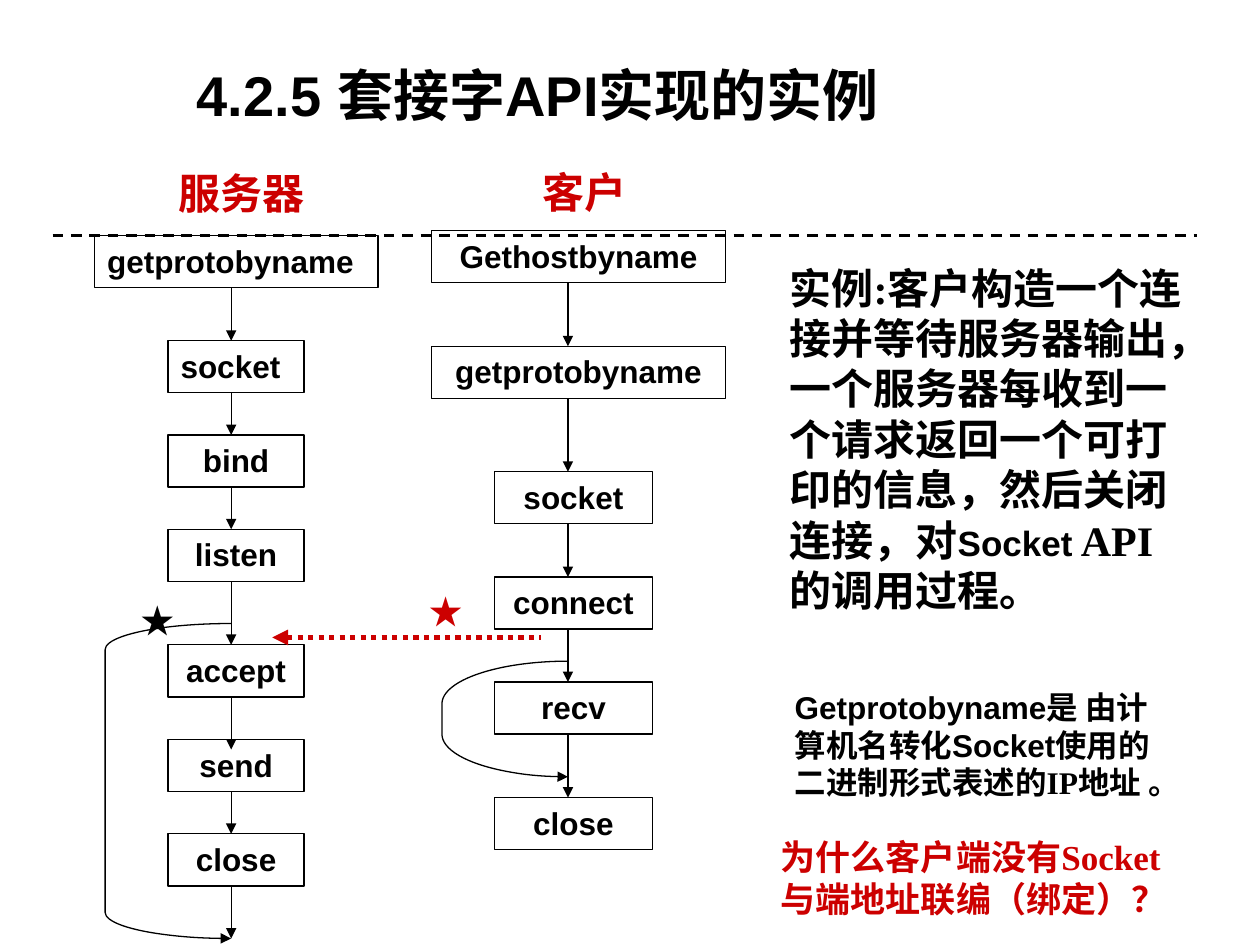
"""Build a slide on the socket API call sequence of a server and a client."""
from dataclasses import dataclass

from lxml.etree import SubElement
from pptx import Presentation
from pptx.dml.color import RGBColor
from pptx.enum.dml import MSO_LINE as Dash
from pptx.enum.shapes import MSO_CONNECTOR as Link, MSO_SHAPE as Preset
from pptx.enum.text import MSO_ANCHOR as Anchor, MSO_AUTO_SIZE as Fit, PP_ALIGN as Align
from pptx.oxml.ns import qn
from pptx.util import Cm, Pt


@dataclass(frozen=True)
class Theme:
    black: RGBColor = RGBColor(0, 0, 0)
    red: RGBColor = RGBColor(0xCC, 0, 0)
    sans: str = "Arial"
    serif: str = "Times New Roman"
    title: int = 32
    head: int = 24
    note: int = 20
    label: int = 18
    thin: float = 0.75


theme = Theme()


def write(box, spans, color=theme.black, align=Align.LEFT, bold=True, wrap=True):
    frame = box.text_frame
    layout = {"word_wrap": wrap, "auto_size": Fit.SHAPE_TO_FIT_TEXT, "vertical_anchor": Anchor.TOP}
    for name, value in layout.items():
        setattr(frame, name, value)
    para = frame.paragraphs[0]
    para.alignment = align
    for text, size, font in spans:
        span = para.add_run()
        span.text = text
        span.font.color.rgb = color
        for name, value in {"size": Pt(size), "name": font, "bold": bold}.items():
            setattr(span.font, name, value)


def draw_line(start, finish, color=theme.black, width=theme.thin, dash=None, tip="tailEnd"):
    line = page.shapes.add_connector(Link.STRAIGHT, *map(Cm, start + finish))
    line.line.color.rgb = color
    line.line.width = Pt(width)
    line.line.dash_style = dash
    if tip:
        SubElement(line.line._get_or_add_ln(), qn("a:" + tip), type="triangle")
    SubElement(line._element.spPr, qn("a:effectLst"))


deck = Presentation()
deck.slide_width, deck.slide_height = Cm(25.4), Cm(19.05)
page = deck.slides.add_slide(deck.slide_layouts[6])

box_height = 1.05
server_x, client_x = 4.66, 11.45
server_wide, server_narrow = (1.91, 5.71), (3.39, 2.74)
client_wide, client_narrow = (8.7, 5.93), (9.97, 3.18)
calls = [
    ("getprotobyname", server_wide, 4.75, Align.LEFT),
    ("socket", server_narrow, 6.87, Align.LEFT),
    ("bind", server_narrow, 8.77, Align.CENTER),
    ("listen", server_narrow, 10.67, Align.CENTER),
    ("accept", server_narrow, 13, Align.CENTER),
    ("send", server_narrow, 14.91, Align.CENTER),
    ("close", server_narrow, 16.81, Align.CENTER),
    ("Gethostbyname", client_wide, 4.65, Align.CENTER),
    ("getprotobyname", client_wide, 6.98, Align.CENTER),
    ("socket", client_narrow, 9.51, Align.CENTER),
    ("connect", client_narrow, 11.63, Align.CENTER),
    ("recv", client_narrow, 13.75, Align.CENTER),
    ("close", client_narrow, 16.08, Align.CENTER),
]
for call, (left, width), top, align in calls:
    box = page.shapes.add_shape(Preset.RECTANGLE, *map(Cm, (left, top, width, box_height)))
    box.shadow.inherit = False
    box.fill.background()
    box.line.color.rgb = theme.black
    box.line.width = Pt(theme.thin)
    write(box, [(call, theme.label, theme.sans)], align=align)

flows = [
    (server_x, [4.75, 6.87, 8.77, 10.67, 13, 14.91, 16.81, 18.92]),
    (client_x, [4.65, 6.98, 9.51, 11.63, 13.75, 16.08]),
]
for x, tops in flows:
    for top, following in zip(tops, tops[1:]):
        overlap = 0.2 if following == 14.91 else 0
        draw_line((x, top + box_height), (x, following + overlap))

loops = [(server_x, 12.57, 6.35, 0.208), (client_x, 13.33, 2.33, 0.369)]
for x, top, height, curve in loops:
    loop = page.shapes.add_shape(Preset.LEFT_BRACKET, *map(Cm, (x - 2.54, top, 2.54, height)))
    loop.adjustments[0] = curve
    loop.shadow.inherit = False
    loop.fill.background()
    loop.line.color.rgb = theme.black
    loop.line.width = Pt(theme.thin)
    SubElement(loop.line._get_or_add_ln(), qn("a:headEnd"), type="triangle")

draw_line((1.06, 4.75), (24.13, 4.75), width=1.5, dash=Dash.DASH, tip=None)
draw_line((5.49, 12.85), (10.9, 12.85), theme.red, 3, Dash.ROUND_DOT, "headEnd")

texts = [
    ((2.92, 1.09, 15.85, 1.6), theme.black, Align.CENTER,
     [("4.2.5 套接字API实现的实例", theme.title, theme.sans)]),
    ((2.97, 3.25, 3.81, 1.27), theme.red, Align.CENTER, [("服务器", theme.head, theme.serif)]),
    ((9.88, 3.23, 3.81, 1.27), theme.red, Align.CENTER, [("客户", theme.head, theme.serif)]),
    ((15.67, 5.16, 8.46, 7.44), theme.black, Align.LEFT, [
        ("实例:客户构造一个连接并等待服务器输出，一个服务器每收到一个请求返回一个"
         "可打印的信息，然后关闭连接，对", theme.head, theme.serif),
        ("Socket", theme.note, theme.sans),
        (" API的调用过程。", theme.head, theme.serif)]),
    ((15.49, 16.71, 8.43, 1.96), theme.red, Align.LEFT,
     [("为什么客户端没有Socket与端地址联编（绑定）？", theme.note, theme.serif)]),
    ((15.77, 13.74, 8.26, 2.54), theme.black, Align.LEFT, [
        ("Getprotobyname是 由计算机名转化Socket使用的二进制形式表述", theme.label, theme.sans),
        ("的IP地址 ", theme.label, theme.serif),
        ("。", theme.label, theme.sans)]),
]
for place, color, align, spans in texts:
    write(page.shapes.add_textbox(*map(Cm, place)), spans, color, align)

for left, top, color in [(2.5, 11.84, theme.black), (8.31, 11.66, theme.red)]:
    star = page.shapes.add_textbox(Cm(left), Cm(top), Cm(1.35), Cm(1.27))
    write(star, [("★", theme.head, theme.serif)], color, Align.CENTER, bold=False, wrap=False)

deck.save("out.pptx")
